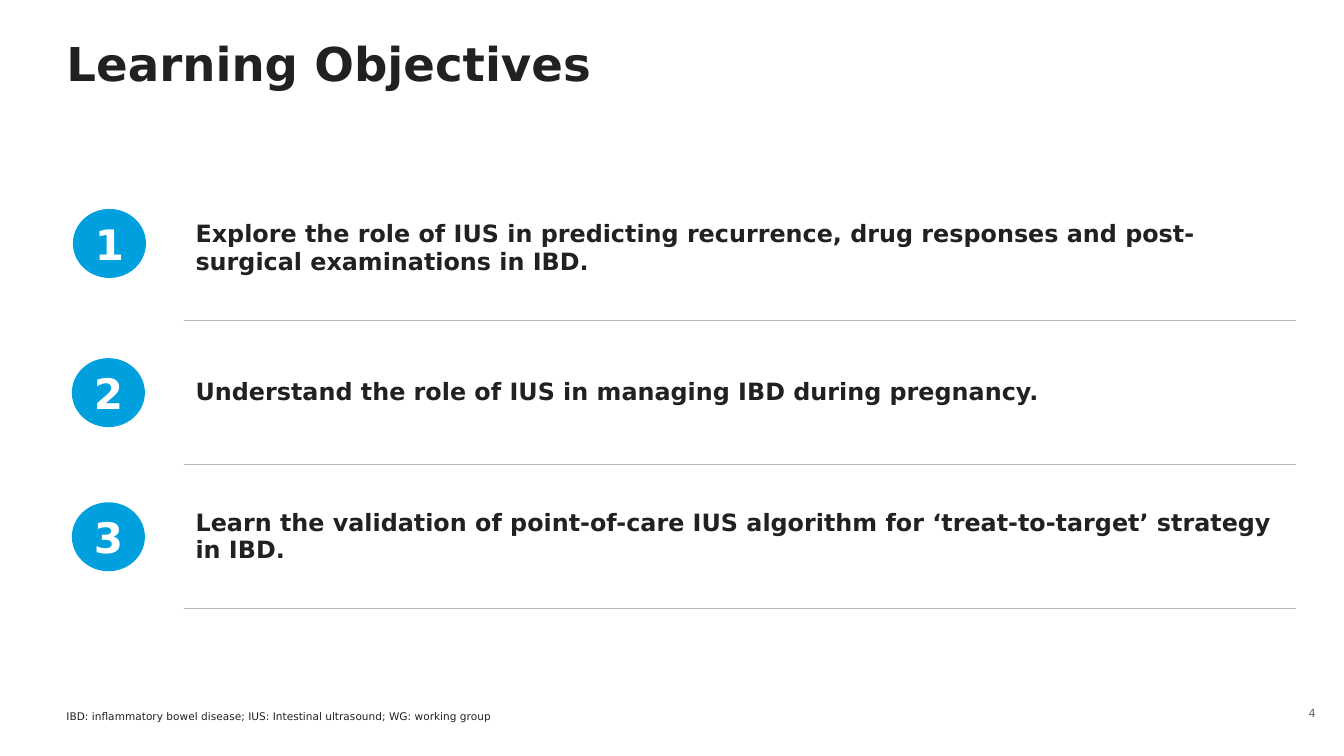
from lxml.etree import SubElement
from pptx import Presentation
from pptx.dml.color import RGBColor
from pptx.enum.shapes import MSO_SHAPE
from pptx.enum.text import MSO_ANCHOR, PP_ALIGN
from pptx.oxml import parse_xml
from pptx.oxml.ns import nsdecls, qn
from pptx.util import Inches, Pt

HUES = {"ink": "212121", "blue": "00A0DF", "white": "FFFFFF",
        "rule": "B7B7B7", "gray": "646464"}
GOALS = [
    "Explore the role of IUS in predicting recurrence, drug responses and post-surgical examinations in IBD.",
    "Understand the role of IUS in managing IBD during pregnancy.",
    "Learn the validation of point-of-care IUS algorithm for ‘treat-to-target’ strategy in IBD.",
]
BARE = "{2D5ABB26-0587-4C30-8999-92F81FD0307C}"  # table style without grid


def write(frame, text, size, hue, bold=False, align=PP_ALIGN.LEFT):
    frame.text = text
    frame.word_wrap = True
    line = frame.paragraphs[0]
    line.alignment = align
    font = line.runs[0].font
    font.name = "DejaVu Sans"
    font.size = Pt(size)
    font.bold = bold
    font.color.rgb = RGBColor.from_string(HUES[hue])


def add_text(left, top, width, height, anchor):
    box = slide.shapes.add_textbox(Inches(left), Inches(top), Inches(width), Inches(height))
    frame = box.text_frame
    frame.margin_left = frame.margin_right = frame.margin_top = frame.margin_bottom = 0
    frame.vertical_anchor = anchor
    return frame


deck = Presentation()
deck.slide_width = Inches(13.33)
deck.slide_height = Inches(7.5)
slide = deck.slides.add_slide(deck.slide_layouts[6])

# Title
title = add_text(0.66, 0.41, 11.1, 0.5, MSO_ANCHOR.BOTTOM)
write(title, "Learning Objectives", 33.3, "ink", True)
title.paragraphs[0].line_spacing = 0.9

# Table of objectives
table = slide.shapes.add_table(len(GOALS), 1, Inches(1.82), Inches(1.75),
                               Inches(11.03), Inches(4.29)).table
table.first_row = table.horz_banding = False
table._tbl.tblPr.find(qn("a:tableStyleId")).text = BARE
for row, goal in enumerate(GOALS):
    cell = table.cell(row, 0)
    cell.vertical_anchor = MSO_ANCHOR.MIDDLE
    cell.margin_left, cell.margin_right = Inches(0.12), Inches(0.06)
    cell.margin_top = cell.margin_bottom = Inches(0.04)
    write(cell.text_frame, goal, 17, "ink", True)
    cell.fill.background()
    rule = parse_xml(f'<a:lnB {nsdecls("a")} w="{Pt(1)}"/>')
    fill = SubElement(rule, qn("a:solidFill"))
    SubElement(fill, qn("a:srgbClr"), val=HUES["rule"])
    cell._tc.get_or_add_tcPr().insert(0, rule)

# Numbered circles
for num, (left, top) in enumerate([(0.74, 2.09), (0.73, 3.57), (0.73, 5)], 1):
    disc = slide.shapes.add_shape(MSO_SHAPE.OVAL, Inches(left), Inches(top),
                                  Inches(0.69), Inches(0.65))
    disc.shadow.inherit = False
    disc.fill.solid()
    disc.fill.fore_color.rgb = RGBColor.from_string(HUES["blue"])
    disc.line.color.rgb = RGBColor.from_string(HUES["blue"])
    disc.line.width = Pt(2.5)
    frame = disc.text_frame
    frame.margin_left = frame.margin_right = frame.margin_top = frame.margin_bottom = 0
    frame.vertical_anchor = MSO_ANCHOR.MIDDLE
    write(frame, str(num), 30, "white", True, PP_ALIGN.CENTER)

# Page number and footnote
page = add_text(12.73, 6.89, 0.32, 0.36, MSO_ANCHOR.MIDDLE)
write(page, "4", 8, "gray", align=PP_ALIGN.RIGHT)
note = add_text(0.66, 6.87, 9.17, 0.3, MSO_ANCHOR.BOTTOM)
write(note, "IBD: inflammatory bowel disease; IUS: Intestinal ultrasound; WG: working group", 7.5, "ink")

deck.save("out.pptx")
